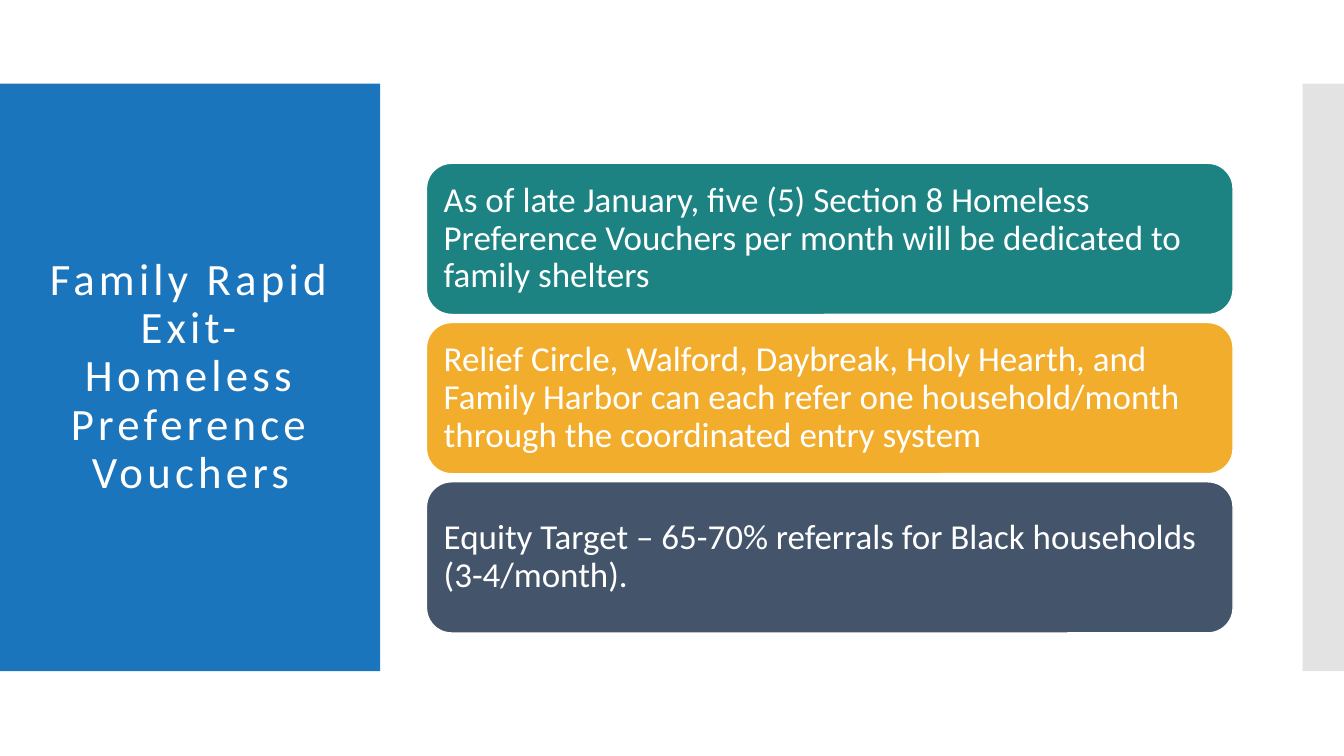
"""Build the Family Rapid Exit voucher slide."""
import pptx
import pptx.dml.color
import pptx.enum.shapes
import pptx.enum.text
import pptx.oxml
import pptx.oxml.ns
import pptx.util

Inches = pptx.util.Inches
Pt = pptx.util.Pt
SHAPES = pptx.enum.shapes.MSO_SHAPE
ALIGN = pptx.enum.text.PP_ALIGN

COLORS = {
    "white": "FFFFFF",
    "blue": "1B75BC",
    "gray": "C8C8C8",
    "teal": "1C8282",
    "gold": "F3AD2C",
    "slate": "44546A",
}

VOUCHER_POINTS = [
    ("teal", "As of late January, five (5) Section 8 Homeless Preference Vouchers "
             "per month will be dedicated to family shelters"),
    ("gold", "Relief Circle, Walford, Daybreak, Holy Hearth, and Family Harbor "
             "can each refer one household/month through the coordinated entry system"),
    ("slate", "Equity Target – 65-70% referrals for Black households (3-4/month)."),
]


def add_block(kind, left, top, width, height, color):
    block = slide.shapes.add_shape(
        kind, Inches(left), Inches(top), Inches(width), Inches(height))
    block.shadow.inherit = False
    block.fill.solid()
    block.fill.fore_color.rgb = pptx.dml.color.RGBColor.from_string(COLORS[color])
    block.line.fill.background()
    return block


def write_text(frame, text, size, align):
    frame.word_wrap = True
    frame.vertical_anchor = pptx.enum.text.MSO_ANCHOR.MIDDLE
    frame.text = text
    paragraph = frame.paragraphs[0]
    paragraph.alignment = align
    paragraph.line_spacing = 0.9
    run = paragraph.runs[0]
    run.font.name = "Calibri"
    run.font.size = Pt(size)
    run.font.color.rgb = pptx.dml.color.RGBColor.from_string(COLORS["white"])
    return run


deck = pptx.Presentation()
deck.slide_width = Inches(13.33)
deck.slide_height = Inches(7.5)
slide = deck.slides.add_slide(deck.slide_layouts[6])

add_block(SHAPES.RECTANGLE, 0, 0.83, 3.77, 5.83, "blue")
side_band = add_block(SHAPES.RECTANGLE, 12.92, 0.83, 0.41, 5.83, "gray")
band_color = side_band.fill._xPr.find(".//" + pptx.oxml.ns.qn("a:srgbClr"))
band_color.append(pptx.oxml.parse_xml(
    f'<a:alpha {pptx.oxml.ns.nsdecls("a")} val="50000"/>'))

title = slide.shapes.add_textbox(Inches(0.28), Inches(1.23), Inches(3.22), Inches(5.03))
title_run = write_text(title.text_frame, "Family Rapid Exit- Homeless Preference Vouchers",
                       32, ALIGN.CENTER)
title_run.font._element.set("spc", "300")

for row, (color, point) in enumerate(VOUCHER_POINTS):
    card = add_block(SHAPES.ROUNDED_RECTANGLE, 4.23, 1.62 + row * 1.58, 8, 1.5, color)
    card.line.color.rgb = pptx.dml.color.RGBColor.from_string(COLORS["white"])
    card.line.width = Pt(1)
    write_text(card.text_frame, point, 25, ALIGN.LEFT)

deck.save("out.pptx")
